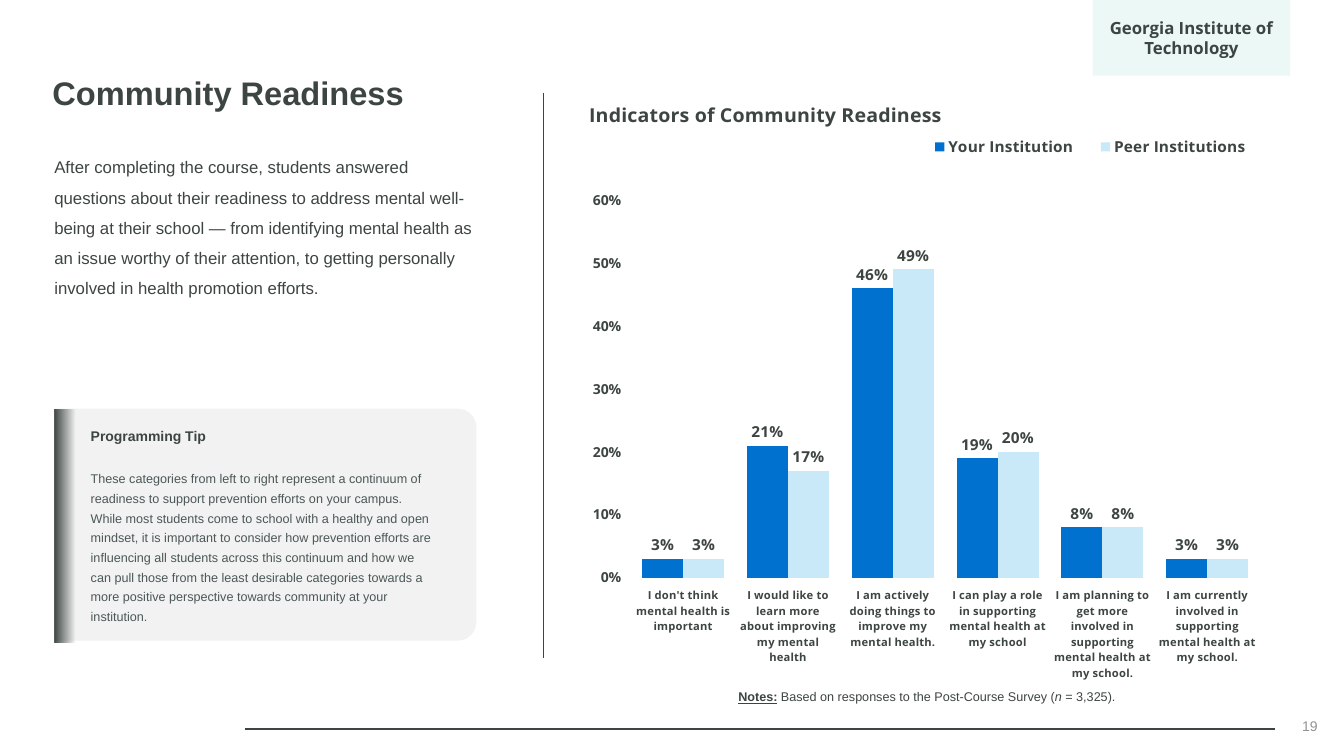
import pptx
import pptx.chart.data
import pptx.dml.color
import pptx.enum.chart
import pptx.enum.shapes
import pptx.enum.text
import pptx.oxml
import pptx.util
import lxml.etree

Pt = pptx.util.Pt
Color = pptx.dml.color.RGBColor
Align = pptx.enum.text.PP_ALIGN
Anchor = pptx.enum.text.MSO_ANCHOR
Shape = pptx.enum.shapes.MSO_SHAPE
Enum = pptx.enum.chart

INK = Color(0x3D, 0x45, 0x42)
SLATE = Color(0x4C, 0x57, 0x58)
GRAY = Color(0x92, 0x94, 0x93)
CARD = Color(0xF2, 0xF2, 0xF2)
TEAL = Color(0x3C, 0xC0, 0xAF)
BLUE = Color(0x01, 0x71, 0xD0)
SKY = Color(0xC9, 0xE9, 0xF8)
SANS = "Arial"
OPEN = "Open Sans"
DML = "http://schemas.openxmlformats.org/drawingml/2006/main"
CHART = "http://schemas.openxmlformats.org/drawingml/2006/chart"


class Deck:
    def __init__(self):
        self.show = pptx.Presentation()
        self.show.slide_width, self.show.slide_height = Pt(960), Pt(540)
        self.slide = self.show.slides.add_slide(self.show.slide_layouts[5])
        self.shapes = self.slide.shapes

    def font(self, font, size, name=SANS, color=INK, bold=False):
        font.size, font.name, font.bold = Pt(size), name, bold
        font.color.rgb = color

    def frame(self, shape, anchor=Anchor.TOP, pad=(7.2, 3.6)):
        frame = shape.text_frame
        frame.word_wrap = True
        frame.vertical_anchor = anchor
        frame.margin_left = frame.margin_right = Pt(pad[0])
        frame.margin_top = frame.margin_bottom = Pt(pad[1])
        return frame

    def para(self, para, text, size, align=Align.LEFT, line=1.0, after=0, **style):
        para.text = text
        para.alignment = align
        para.line_spacing = line
        para.space_after = Pt(after)
        self.font(para.font, size, **style)

    def title(self, text, *box):
        shape = self.shapes.title
        shape.left, shape.top, shape.width, shape.height = map(Pt, box)
        frame = self.frame(shape, Anchor.MIDDLE)
        self.para(frame.paragraphs[0], text, 23.3, line=0.9, bold=True)

    def text(self, *box, **style):
        return self.frame(self.shapes.add_textbox(*map(Pt, box)), **style)

    def block(self, kind, *box):
        shape = self.shapes.add_shape(kind, *map(Pt, box))
        shape.shadow.inherit = False
        shape.line.fill.background()
        return shape

    def fill(self, shape, color, alpha=None):
        shape.fill.solid()
        shape.fill.fore_color.rgb = color
        if alpha:
            tone = shape._element.spPr.find(f".//{{{DML}}}srgbClr")
            lxml.etree.SubElement(tone, f"{{{DML}}}alpha", val=str(alpha * 1000))

    def fade(self, color, *box):
        shape = self.block(Shape.RECTANGLE, *box)
        grad = pptx.oxml.parse_xml(
            f'<a:gradFill xmlns:a="{DML}" rotWithShape="1"><a:gsLst>'
            f'<a:gs pos="0"><a:srgbClr val="{color}"/></a:gs>'
            f'<a:gs pos="70000"><a:srgbClr val="{color}"><a:alpha val="0"/></a:srgbClr></a:gs>'
            '</a:gsLst><a:lin ang="0" scaled="0"/></a:gradFill>')
        shape._element.spPr.find(f"{{{DML}}}prstGeom").addnext(grad)

    def line(self, width, *ends):
        line = self.shapes.add_connector(
            pptx.enum.shapes.MSO_CONNECTOR.STRAIGHT, *map(Pt, ends))
        line.line.color.rgb = INK
        line.line.width = Pt(width)
        lxml.etree.SubElement(line._element.spPr, f"{{{DML}}}effectLst")

    def place(self, node, after, inner=False, **spots):
        for old in node.findall(f"{{{CHART}}}layout"):
            node.remove(old)
        rows = '<c:layoutTarget val="inner"/>' if inner else ""
        rows += "".join(f'<c:{key}Mode val="edge"/>' for key in "xy")
        rows += "".join(f'<c:{key} val="{spot}"/>' for key, spot in spots.items())
        layout = pptx.oxml.parse_xml(
            f'<c:layout xmlns:c="{CHART}"><c:manualLayout>{rows}</c:manualLayout></c:layout>')
        if after:
            node.find(f"{{{CHART}}}{after}").addnext(layout)
        else:
            node.insert(0, layout)

    def axis(self, axis, size):
        axis.has_major_gridlines = False
        axis.format.line.fill.background()
        self.font(axis.tick_labels.font, size, OPEN, bold=True)

    def chart(self, title, cats, rows, *box):
        data = pptx.chart.data.CategoryChartData(number_format="0%")
        data.categories = cats
        for name, color, vals in rows:
            data.add_series(name, vals)
        chart = self.shapes.add_chart(
            Enum.XL_CHART_TYPE.COLUMN_CLUSTERED, *map(Pt, box), data).chart
        self.font(chart.font, 8, OPEN)

        chart.has_title = True
        head = chart.chart_title.text_frame.paragraphs[0]
        head.text = title
        self.font(head.font, 14, OPEN, bold=True)
        self.place(chart.chart_title._element, "tx", x=0.01, y=0.035)

        chart.has_legend = True
        key = chart.legend
        key.position = Enum.XL_LEGEND_POSITION.TOP
        key.include_in_layout = False
        self.font(key.font, 11, OPEN, bold=True)
        self.place(key._element, "legendPos", x=0.48, y=0.09, w=0.51, h=0.06)

        self.axis(chart.category_axis, 8)
        rate = chart.value_axis
        self.axis(rate, 10)
        rate.minimum_scale, rate.maximum_scale, rate.major_unit = 0, 0.6, 0.1
        rate.tick_labels.number_format = "0%"
        rate.tick_labels.number_format_is_linked = False

        plot = chart.plots[0]
        plot.gap_width, plot.overlap = 56, 0
        plot.vary_by_categories = False
        self.place(plot._element.getparent(), None, inner=True,
                   x=0.075, y=0.21, w=0.903, h=0.636)
        for bars, (name, color, vals) in zip(plot.series, rows):
            bars.format.fill.solid()
            bars.format.fill.fore_color.rgb = color
            tags = bars.data_labels
            tags.show_value = True
            tags.position = Enum.XL_LABEL_POSITION.OUTSIDE_END
            tags.number_format = "0%"
            tags.number_format_is_linked = False
            self.font(tags.font, 11, OPEN, bold=True)


def main():
    deck = Deck()
    deck.line(1.5, 174.96, 520.56, 910.8, 520.56)

    card = deck.block(Shape.ROUND_2_SAME_RECTANGLE, 106.56, 223.92, 165.6, 301.68)
    card.rotation = 90
    card.adjustments[0], card.adjustments[1] = 0.079, 0
    deck.fill(card, CARD)
    deck.fade(INK, 38.88, 292.32, 21.6, 166.32)

    page = deck.text(732.24, 504, 216, 28.8, anchor=Anchor.MIDDLE)
    deck.para(page.paragraphs[0], "19", 10, Align.RIGHT, color=GRAY)
    deck.title("Community Readiness", 30.24, 42.48, 826.56, 50.4)

    note = deck.text(413.28, 490.32, 497.52, 13.68, anchor=Anchor.MIDDLE).paragraphs[0]
    deck.para(note, "", 9, Align.CENTER, Pt(12), 2)
    for text in ("Notes:", " Based on responses to the Post-Course Survey (", "n", " = 3,325)."):
        run = note.add_run()
        run.text = text
        if text == "Notes:":
            run.font.bold = run.font.underline = True
        elif text == "n":
            run.font.italic = True

    deck.chart(
        "Indicators of Community Readiness",
        ["I don't think mental health is important",
         "I would like to learn more about improving my mental health",
         "I am actively doing things to improve my mental health.",
         "I can play a role in supporting mental health at my school",
         "I am planning to get more involved in supporting mental health at my school.",
         "I am currently involved in supporting mental health at my school."],
        [("Your Institution", BLUE, (0.03, 0.21, 0.46, 0.19, 0.08, 0.03)),
         ("Peer Institutions", SKY, (0.03, 0.17, 0.49, 0.2, 0.08, 0.03))],
        413.28, 54, 497.52, 432)
    deck.line(1, 388.08, 66.24, 388.08, 470.16)

    intro = deck.text(31.68, 101.52, 315.36, 113.76)
    deck.para(intro.paragraphs[0], "After completing the course, students answered questions about their readiness to address mental well-being at their school — from identifying mental health as an issue worthy of their attention, to getting personally involved in health promotion efforts.", 12, line=1.5, after=2)

    tip = deck.text(46.8, 292.32, 281.52, 166.32, anchor=Anchor.MIDDLE, pad=(18, 0))
    deck.para(tip.paragraphs[0], "Programming Tip", 10, line=Pt(12), after=16, bold=True)
    deck.para(tip.add_paragraph(), "These categories from left to right represent a continuum of readiness to support prevention efforts on your campus. While most students come to school with a healthy and open mindset, it is important to consider how prevention efforts are influencing all students across this continuum and how we can pull those from the least desirable categories towards a more positive perspective towards community at your institution.", 9, line=1.3, after=2, color=SLATE)

    tag = deck.block(Shape.RECTANGLE, 780.48, 0, 141.12, 54)
    deck.fill(tag, TEAL, 10)
    name = deck.frame(tag, Anchor.MIDDLE, (7.2, 0))
    deck.para(name.paragraphs[0], "Georgia Institute of Technology", 12, Align.CENTER, name=OPEN, bold=True)
    deck.show.save("out.pptx")


if __name__ == "__main__":
    main()
